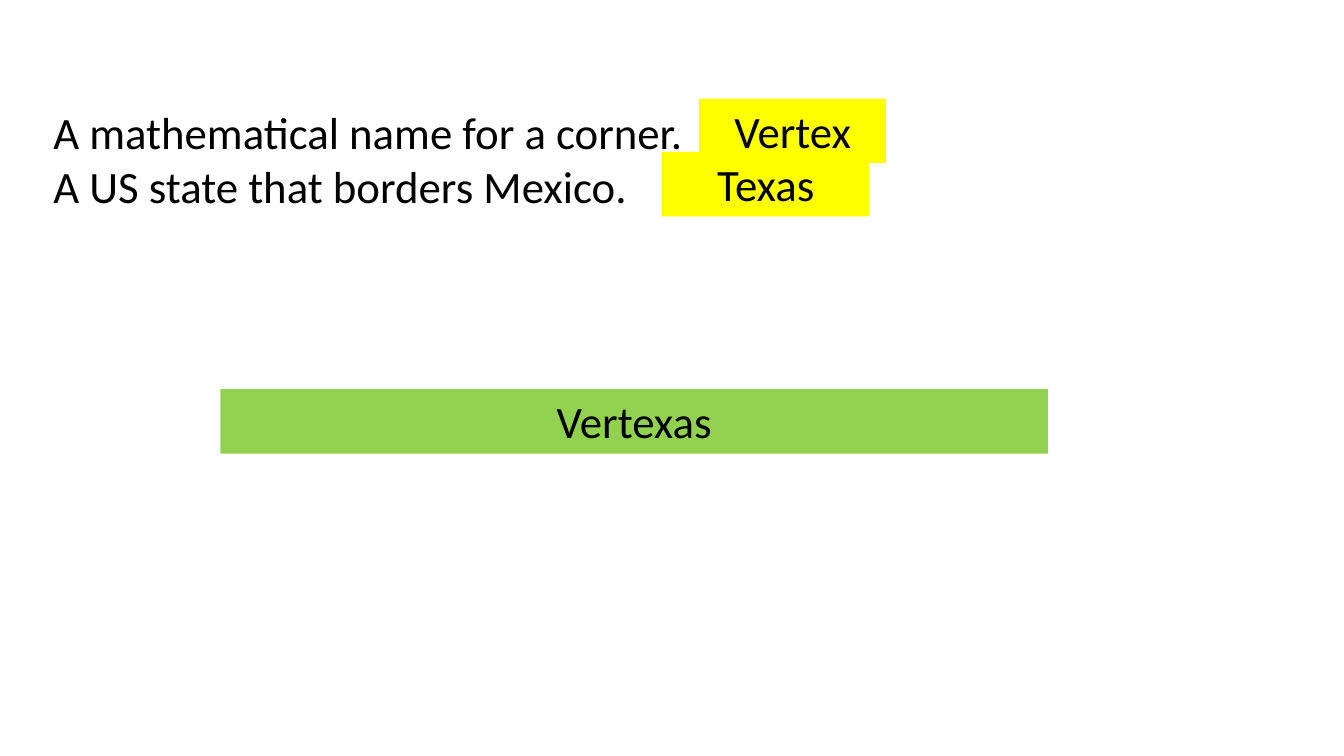
"""Build a word-puzzle slide with two clues, their answers and the blended word."""
import dataclasses

import pptx
import pptx.dml.color
import pptx.enum.text
import pptx.util
from pptx.util import Pt


@dataclasses.dataclass(frozen=True)
class Theme:
    font: str = "Calibri"
    size: int = 32
    text: str = "000000"
    answer: str = "FFFF00"
    blend: str = "92D050"


THEME = Theme()
CLUES = ["A mathematical name for a corner.", "A US state that borders Mexico."]


def rgb(value):
    return pptx.dml.color.RGBColor.from_string(value)


def add_text(s, lines, left, top, width, height):
    sp = s.shapes.add_textbox(Pt(left), Pt(top), Pt(width), Pt(height))
    tf = sp.text_frame
    tf.word_wrap = True
    tf.auto_size = pptx.enum.text.MSO_AUTO_SIZE.SHAPE_TO_FIT_TEXT
    tf.text = "\n".join(lines)
    for p in tf.paragraphs:
        p.font.name = THEME.font
        p.font.size = Pt(THEME.size)
        p.font.color.rgb = rgb(THEME.text)
    return sp


def add_label(s, word, fill, left, top, width):
    sp = add_text(s, [word], left, top, width, 46)
    sp.fill.solid()
    sp.fill.fore_color.rgb = rgb(fill)
    sp.text_frame.paragraphs[0].alignment = pptx.enum.text.PP_ALIGN.CENTER


def main():
    prs = pptx.Presentation()
    prs.slide_width, prs.slide_height = Pt(960), Pt(540)
    s = prs.slides.add_slide(prs.slide_layouts[6])
    add_text(s, CLUES, 31, 71.5, 744.5, 85)
    add_label(s, "Vertex", THEME.answer, 499.5, 70.5, 133.5)
    add_label(s, "Texas", THEME.answer, 473, 108.5, 148)
    add_label(s, "Vertexas", THEME.blend, 157.5, 278, 591)
    prs.save("out.pptx")


if __name__ == "__main__":
    main()
